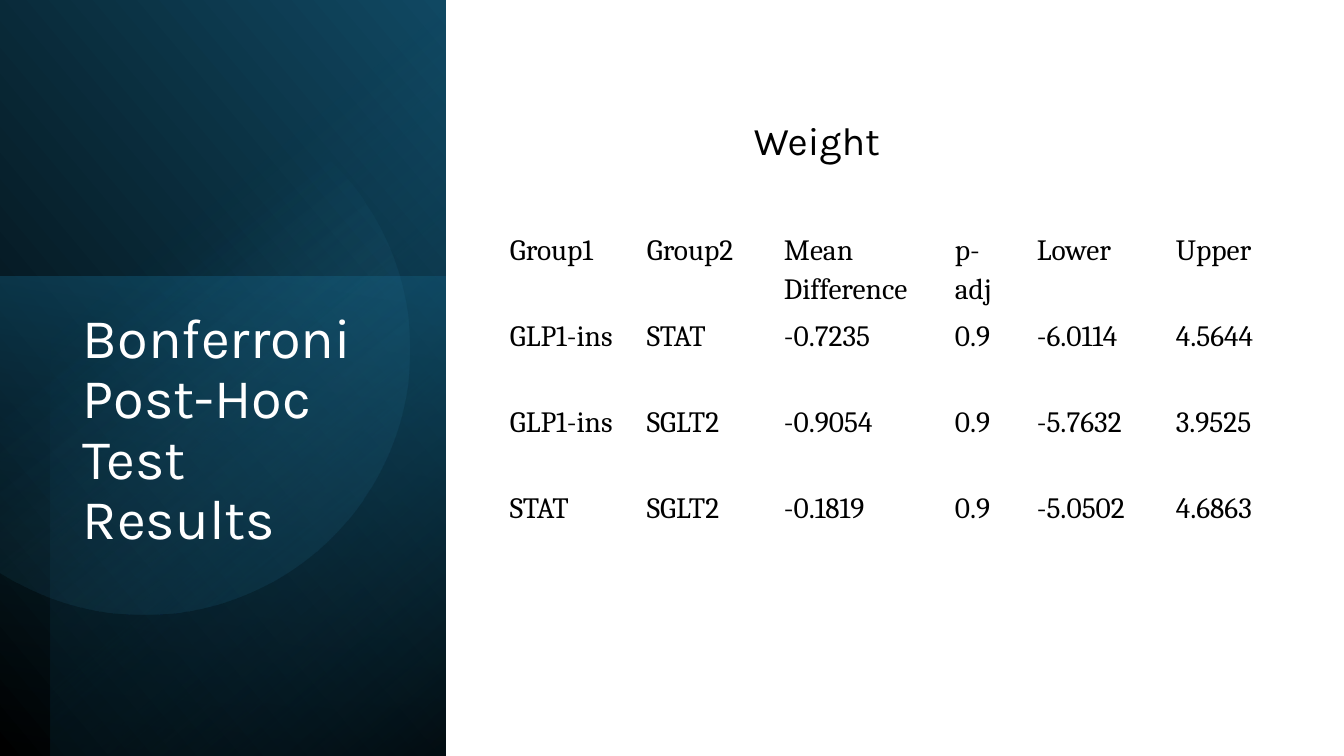
from math import acos, cos, sin

from pptx import Presentation
from pptx.dml.color import RGBColor
from pptx.enum.shapes import MSO_SHAPE
from pptx.enum.text import MSO_ANCHOR, PP_ALIGN
from pptx.oxml import parse_xml
from pptx.oxml.ns import nsdecls, qn
from pptx.util import Emu, Pt

COLORS = {
    "black": "000000",
    "white": "FFFFFF",
    "navy": "104862",
    "teal": "156082",
    "deep": "0B3041",
    "sky": "46B1E1",
}

TITLE = "Bonferroni Post-Hoc Test Results"
TITLE_BOX = (73, 305, 317, 339)
MEASURE = "Weight"
MEASURE_BOX = (651, 111, 332, 57)

RESULTS = [
    ("Group1", "Group2", "Mean Difference", "p-adj", "Lower", "Upper"),
    ("GLP1-ins", "STAT", "-0.7235", "0.9", "-6.0114", "4.5644"),
    ("GLP1-ins", "SGLT2", "-0.9054", "0.9", "-5.7632", "3.9525"),
    ("STAT", "SGLT2", "-0.1819", "0.9", "-5.0502", "4.6863"),
]
RESULTS_CORNER = (496, 227)
COLUMN_WIDTHS = (137, 137, 171, 82, 139, 130)
ROW_HEIGHTS = (86, 86, 86, 46)
CELL_MARGINS = (14, 2, 14, 0)

PANELS = [
    {"box": (-156, 156, 758, 446), "turn": 90, "flip": True, "angle": 310,
     "stops": [(0, "black", 100), (100, "navy", 100)]},
    {"box": (-17, 293, 480, 446), "turn": 270, "flip": False, "angle": 190,
     "stops": [(0, "teal", 50), (100, "deep", 0)]},
    {"box": (-130, 180, 756, 395), "turn": 270, "flip": True, "angle": 220,
     "stops": [(0, "black", 59), (69, "teal", 0)]},
]
DISC = {"center": (144, 350), "radius": 265, "angle": 51.6,
        "stops": [(39, "sky", 0), (100, "navy", 26)]}
DISC_STEPS = 120

SCALE = 914400 / 100.8


def px(length):
    return Emu(round(length * SCALE))


def color(name):
    return RGBColor.from_string(COLORS[name])


def paint(shape, stops, angle):
    shape.shadow.inherit = False
    shape.line.fill.background()
    shape.fill.background()
    stop_xml = "".join(
        f'<a:gs pos="{position * 1000}"><a:srgbClr val="{COLORS[name]}">'
        f'<a:alpha val="{opacity * 1000}"/></a:srgbClr></a:gs>'
        for position, name, opacity in stops
    )
    gradient = parse_xml(
        f'<a:gradFill {nsdecls("a")} rotWithShape="1"><a:gsLst>{stop_xml}</a:gsLst>'
        f'<a:lin ang="{round(angle * 60000)}" scaled="0"/></a:gradFill>'
    )
    properties = shape._element.spPr
    properties.replace(properties.find(qn("a:noFill")), gradient)


def style(paragraph, font_name, size, color_name):
    paragraph.font.name = font_name
    paragraph.font.size = Pt(size)
    paragraph.font.color.rgb = color(color_name)


def add_label(slide, text, box, size, color_name):
    frame = slide.shapes.add_textbox(*map(px, box)).text_frame
    frame.word_wrap = True
    frame.text = text
    paragraph = frame.paragraphs[0]
    style(paragraph, "Karla", size, color_name)
    return paragraph


def add_panels(slide):
    for panel in PANELS:
        shape = slide.shapes.add_shape(MSO_SHAPE.RECTANGLE, *map(px, panel["box"]))
        shape.rotation = panel["turn"]
        if panel["flip"]:
            shape._element.spPr.find(qn("a:xfrm")).set("flipH", "1")
        paint(shape, panel["stops"], panel["angle"])


def add_disc(slide):
    center_x, center_y = DISC["center"]
    radius = DISC["radius"]
    reach = acos(-center_x / radius)
    turns = [reach * (2 * step / DISC_STEPS - 1) for step in range(DISC_STEPS + 1)]
    rim = [
        (px(center_x + radius * cos(turn)), px(center_y + radius * sin(turn)))
        for turn in turns
    ]
    outline = slide.shapes.build_freeform(*rim[0])
    outline.add_line_segments(rim[1:], close=True)
    paint(outline.convert_to_shape(), DISC["stops"], DISC["angle"])


def add_results(slide):
    table = slide.shapes.add_table(
        len(RESULTS), len(COLUMN_WIDTHS), *map(px, RESULTS_CORNER),
        px(sum(COLUMN_WIDTHS)), px(sum(ROW_HEIGHTS)),
    ).table
    table.first_row = table.horz_banding = False
    for column, width in zip(table.columns, COLUMN_WIDTHS):
        column.width = px(width)
    for row, height, values in zip(table.rows, ROW_HEIGHTS, RESULTS):
        row.height = px(height)
        for cell, value in zip(row.cells, values):
            cell.fill.background()
            cell.vertical_anchor = MSO_ANCHOR.TOP
            (cell.margin_left, cell.margin_top,
             cell.margin_right, cell.margin_bottom) = map(px, CELL_MARGINS)
            cell.text = value
            paragraph = cell.text_frame.paragraphs[0]
            paragraph.line_spacing = 1.15
            paragraph.space_after = Pt(10)
            style(paragraph, "Cambria", 21, "black")


def main():
    deck = Presentation()
    deck.slide_width, deck.slide_height = px(1344), px(756)
    slide = deck.slides.add_slide(deck.slide_layouts[6])
    add_panels(slide)
    add_disc(slide)
    add_label(slide, TITLE, TITLE_BOX, 40, "white").line_spacing = 0.9
    add_results(slide)
    add_label(slide, MEASURE, MEASURE_BOX, 28, "black").alignment = PP_ALIGN.CENTER
    deck.save("out.pptx")


if __name__ == "__main__":
    main()
